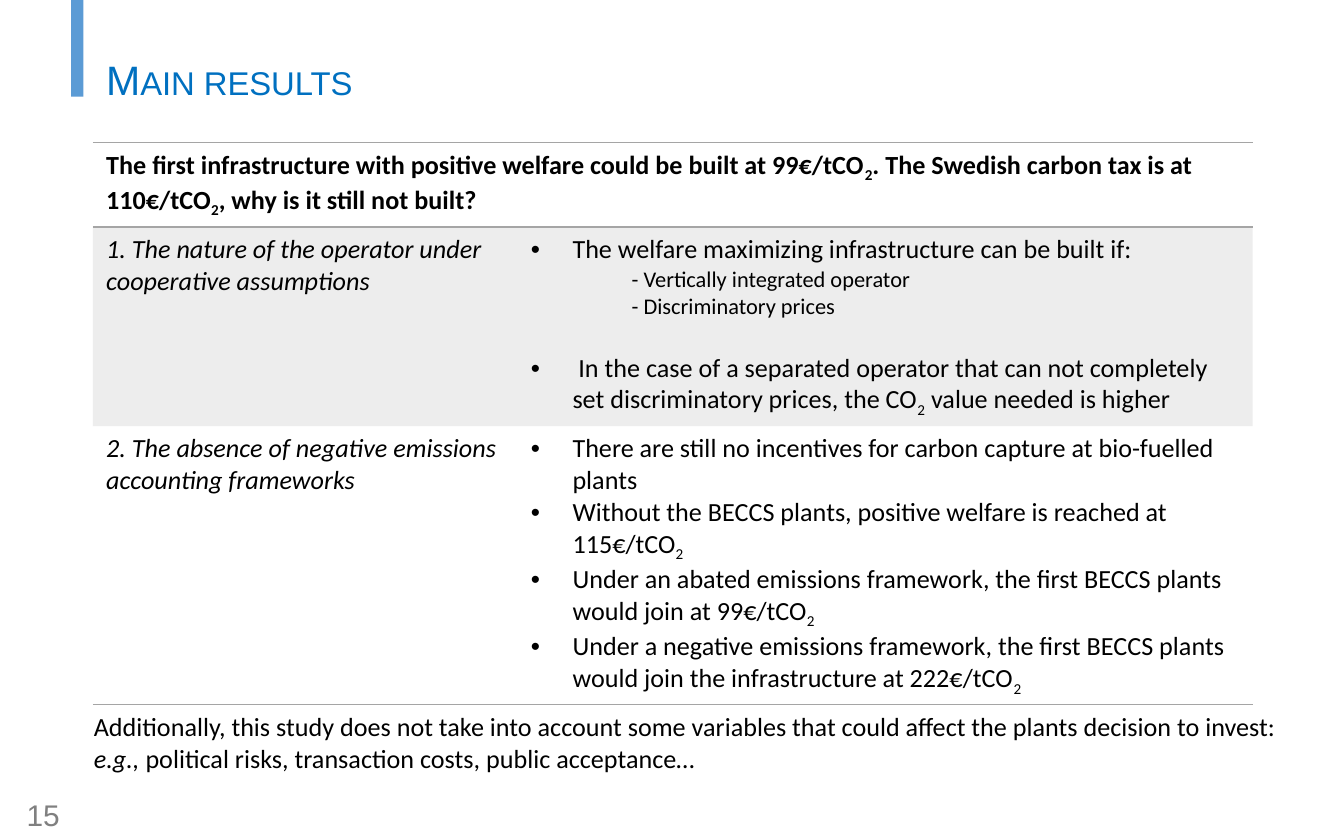
from pptx import Presentation
from pptx.dml.color import RGBColor
from pptx.enum.shapes import MSO_SHAPE as Shape
from pptx.enum.text import MSO_ANCHOR as Anchor, MSO_AUTO_SIZE as AutoSize, PP_ALIGN as Align
from pptx.oxml import parse_xml
from pptx.oxml.ns import nsdecls
from pptx.oxml.xmlchemy import OxmlElement
from pptx.util import Inches, Pt

HEADLINE = ("The first infrastructure with positive welfare could be built at 99€/tCO|2|. "
            "The Swedish carbon tax is at 110€/tCO|2|, why is it still not built?")
REASONS = [
    ("1. The nature of the operator under cooperative assumptions", [
        ("bullet", "The welfare maximizing infrastructure can be built if:", 0),
        ("dash", "- Vertically integrated operator", 0),
        ("dash", "- Discriminatory prices", 0),
        ("bullet", " In the case of a separated operator that can not completely "
                   "set discriminatory prices, the CO|2| value needed is higher", 17),
    ]),
    ("2. The absence of negative emissions accounting frameworks", [
        ("bullet", "There are still no incentives for carbon capture at bio-fuelled plants", 0),
        ("bullet", "Without the BECCS plants, positive welfare is reached at 115€/tCO|2|", 0),
        ("bullet", "Under an abated emissions framework, the first BECCS plants "
                   "would join at 99€/tCO|2|", 0),
        ("bullet", "Under a negative emissions framework, the first BECCS plants "
                   "would join the infrastructure at 222€/tCO|2|", 0),
    ]),
]


def rgb(color):
    return RGBColor.from_string(color)


class Deck:
    heading_font, body_font = "Arial", "Calibri"
    black, gray, rule = "000000", "808080", "A5A5A5"
    accent, blue = "5B9BD5", "0070C0"

    def __init__(self, prs):
        self.s = prs.slides.add_slide(prs.slide_layouts[5])

    def run(self, p, text, size=14, color=black, font=body_font, bold=False, italic=False):
        for i, part in enumerate(text.split("|")):
            if not part:
                continue
            r = p.add_run()
            r.text = part
            r.font.size, r.font.name = Pt(size), font
            r.font.bold, r.font.italic = bold, italic
            r.font.color.rgb = rgb(color)
            if i % 2:
                r._r.get_or_add_rPr().set("baseline", "-25000")

    def title(self, text, x, y, w, h):
        sp = self.s.shapes.title
        sp.left, sp.top, sp.width, sp.height = map(Inches, (x, y, w, h))
        tf = sp.text_frame
        tf.vertical_anchor = Anchor.MIDDLE
        p = tf.paragraphs[0]
        p.alignment, p.line_spacing = Align.LEFT, 0.9
        self.run(p, text, 22, self.blue, self.heading_font)
        p.runs[0]._r.get_or_add_rPr().set("cap", "small")

    def bar(self, x, y, w, h):
        sp = self.s.shapes.add_shape(Shape.RECTANGLE, *map(Inches, (x, y, w, h)))
        sp.shadow.inherit = False
        sp.fill.solid()
        sp.fill.fore_color.rgb = rgb(self.accent)
        sp.line.fill.background()

    def text(self, x, y, w, h, wrap=True):
        tf = self.s.shapes.add_textbox(*map(Inches, (x, y, w, h))).text_frame
        tf.word_wrap = wrap
        tf.auto_size = AutoSize.SHAPE_TO_FIT_TEXT
        return tf

    def bullet(self, p):
        pPr = p._p.get_or_add_pPr()
        pPr.set("marL", str(Inches(0.31)))
        pPr.set("indent", str(-Inches(0.31)))
        for tag, key, value in (("a:buFont", "typeface", "Arial"), ("a:buChar", "char", "•")):
            el = OxmlElement(tag)
            el.set(key, value)
            pPr.append(el)

    def border(self, cell, *sides):
        for side in sides:
            cell._tc.get_or_add_tcPr().append(parse_xml(
                f'<a:ln{side} {nsdecls("a")} w="12700"><a:solidFill>'
                f'<a:srgbClr val="{self.rule}"/></a:solidFill></a:ln{side}>'))

    def shade(self, cell, shaded):
        if not shaded:
            cell.fill.background()
            return
        cell.fill.solid()
        cell.fill.fore_color.rgb = rgb(self.rule)
        alpha = OxmlElement("a:alpha")
        alpha.set("val", "20000")
        cell._tc.tcPr.find(".//" + "{http://schemas.openxmlformats.org/drawingml/2006/main}srgbClr").append(alpha)

    def points(self, tf, items):
        for i, (kind, text, gap) in enumerate(items):
            p = tf.paragraphs[0] if i == 0 else tf.add_paragraph()
            if kind == "bullet":
                self.bullet(p)
            else:
                p._p.get_or_add_pPr().set("marL", str(Inches(0.75)))
            if gap:
                p.space_before = Pt(gap)
            self.run(p, text, 14 if kind == "bullet" else 12)

    def table(self, x, y, widths, heights, headline, reasons):
        frame = self.s.shapes.add_table(len(heights), len(widths), Inches(x), Inches(y),
                                        Inches(sum(widths)), Inches(sum(heights)))
        table = frame.table
        table.first_row = table.horz_banding = False
        table._tbl.tblPr[0].text = "{2D5ABB26-0587-4C30-8999-92F81FD0307C}"
        for column, width in zip(table.columns, widths):
            column.width = Inches(width)
        for row, height in zip(table.rows, heights):
            row.height = Inches(height)
        sides = [("T", "B"), (), ("B",)]
        for i, row in enumerate(table.rows):
            for cell in row.cells:
                self.border(cell, *sides[i])
                self.shade(cell, i == 1)
        head = table.cell(0, 0)
        head.merge(table.cell(0, 1))
        self.run(head.text_frame.paragraphs[0], headline, bold=True)
        for i, (reason, items) in enumerate(reasons, 1):
            self.run(table.cell(i, 0).text_frame.paragraphs[0], reason, italic=True)
            self.points(table.cell(i, 1).text_frame, items)


def main():
    prs = Presentation()
    prs.slide_width, prs.slide_height = Inches(10), Inches(6.25)
    deck = Deck(prs)

    number = deck.text(0.1, 5.88, 0.48, 0.35)
    deck.run(number.paragraphs[0], "15", 16, deck.gray, deck.heading_font)
    deck.bar(0.53, 0, 0.09, 0.72)
    deck.title("Main results", 0.69, 0.38, 6.79, 0.47)
    deck.table(0.69, 1.06, [3.16, 5.47], [0.63, 1.48, 2.07], HEADLINE, REASONS)

    note = deck.text(0.6, 5.24, 9.07, 0.57, wrap=False)
    deck.run(note.paragraphs[0], "Additionally, this study does not take into account some variables "
                                 "that could affect the plants decision to invest:")
    p = note.add_paragraph()
    deck.run(p, "e.g., ", italic=True)
    deck.run(p, "political risks, transaction costs, public acceptance…")

    prs.save("out.pptx")


if __name__ == "__main__":
    main()
